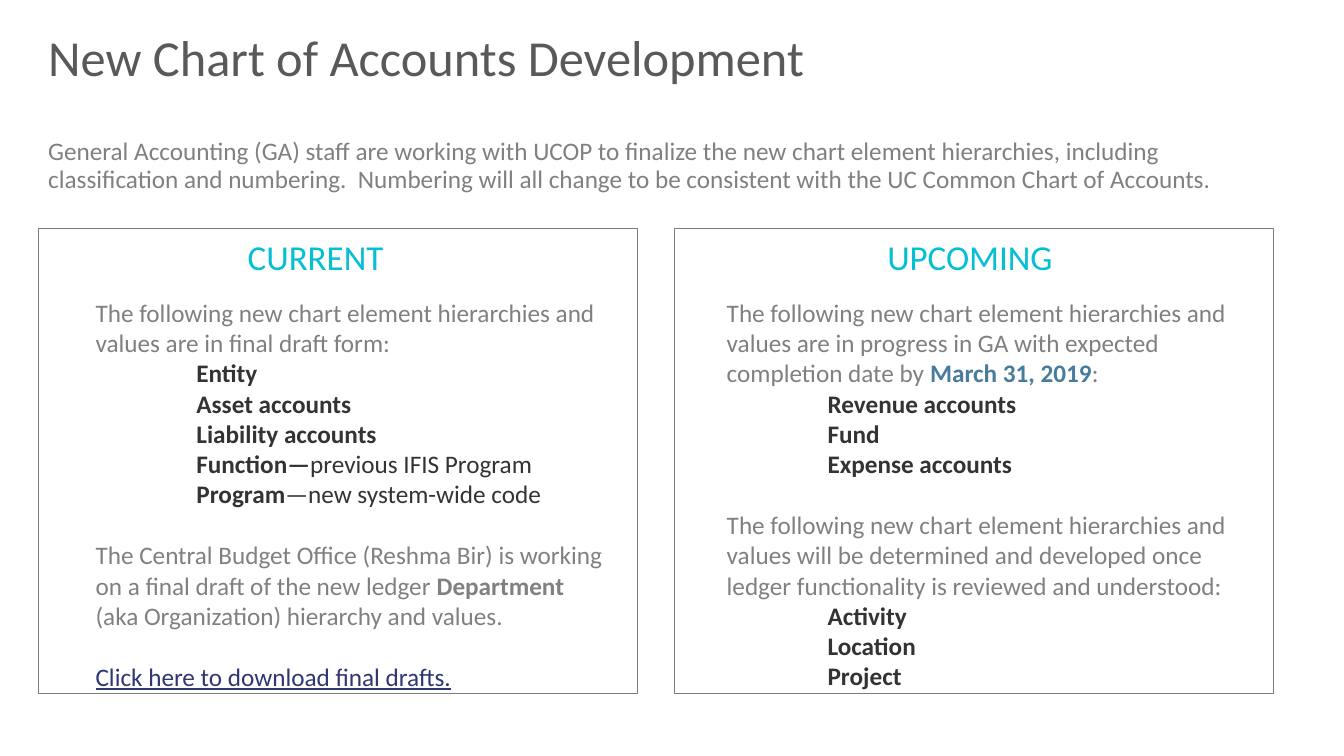
from pptx import Presentation
from pptx.dml.color import RGBColor
from pptx.enum.shapes import MSO_SHAPE
from pptx.enum.text import PP_ALIGN
from pptx.util import Inches, Pt

FONT = "Calibri"
TITLE_GRAY, GRAY, DARK = "585958", "808080", "333333"
CYAN, BLUE, LINK, BORDER = "05BFD5", "487C9C", "2E3772", "7C7C7C"

# A run is (text, colour, style letters): b = bold, u = underlined.
# A paragraph is (kind, runs).
TITLE = [("body", [("New Chart of Accounts Development", TITLE_GRAY, "")])]
INTRO = [("body", [(
    "General Accounting (GA) staff are working with UCOP to finalize the new chart "
    "element hierarchies, including classification and numbering.  Numbering will all "
    "change to be consistent with the UC Common Chart of Accounts.", GRAY, "")])]


def items(*names):
    return [("item", [(name, DARK, "b")]) for name in names]


CURRENT = [
    ("body", [("The following new chart element hierarchies and values are in "
               "final draft\u00a0form:", GRAY, "")]),
    *items("Entity", "Asset accounts", "Liability accounts"),
    ("item", [("Function—", DARK, "b"), ("previous IFIS Program", DARK, "")]),
    ("item", [("Program", DARK, "b"), ("—new system-wide code", DARK, "")]),
    ("section", [("The Central Budget Office (Reshma Bir) is working on a final draft "
                  "of the new ledger ", GRAY, ""),
                 ("Department", GRAY, "b"),
                 (" (aka Organization) hierarchy and values.", GRAY, "")]),
    ("section", [("Click here to download final drafts.", LINK, "u")]),
]
UPCOMING = [
    ("body", [("The following new chart element hierarchies and values are in progress "
               "in GA with expected completion date by ", GRAY, ""),
              ("March 31, 2019", BLUE, "b"), (":", GRAY, "")]),
    *items("Revenue accounts", "Fund", "Expense accounts"),
    ("section", [("The following new chart element hierarchies and values will be "
                  "determined and developed once ledger functionality is reviewed and "
                  "understood:", GRAY, "")]),
    *items("Activity", "Location", "Project"),
]
# heading, heading centre, text left, paragraphs
PANELS = [("CURRENT", 3.13, 0.85, CURRENT), ("UPCOMING", 9.62, 7.11, UPCOMING)]

PANEL_LEFT, PANEL_TOP, PANEL_WIDTH, PANEL_HEIGHT, PANEL_STEP = 0.38, 2.27, 5.94, 4.61, 6.31
HEADING_WIDTH = 1.86
ITEM_INDENT = Inches(1)
SECTION_GAP = Pt(22)


def rgb(code):
    return RGBColor.from_string(code)


def add_text(slide, area, paragraphs, size, spacing=None, align=PP_ALIGN.LEFT):
    box = slide.shapes.add_textbox(*map(Inches, area))
    frame = box.text_frame
    frame.word_wrap = True
    for number, (kind, runs) in enumerate(paragraphs):
        para = frame.add_paragraph() if number else frame.paragraphs[0]
        para.alignment = align
        if spacing:
            para.line_spacing = spacing
        if kind == "item":
            para._p.get_or_add_pPr().set("marL", str(ITEM_INDENT))
        elif kind == "section":
            para.space_before = SECTION_GAP
        for text, color, style in runs:
            span = para.add_run()
            span.text = text
            span.font.name = FONT
            span.font.size = Pt(size)
            span.font.color.rgb = rgb(color)
            span.font.bold = "b" in style
            span.font.underline = "u" in style


def add_panel(slide, left):
    panel = slide.shapes.add_shape(MSO_SHAPE.RECTANGLE, *map(
        Inches, (left, PANEL_TOP, PANEL_WIDTH, PANEL_HEIGHT)))
    panel.shadow.inherit = False
    panel.fill.background()
    panel.line.color.rgb = rgb(BORDER)
    panel.line.width = Pt(0.75)


def main():
    deck = Presentation()
    deck.slide_width, deck.slide_height = Inches(13.33), Inches(7.5)
    slide = deck.slides.add_slide(deck.slide_layouts[6])
    add_text(slide, (0.38, 0.28, 12.35, 0.7), TITLE, 36, 0.9)
    add_text(slide, (0.38, 1.33, 12.35, 0.65), INTRO, 18, 0.9)
    for column, (heading, centre, text_left, paragraphs) in enumerate(PANELS):
        add_panel(slide, PANEL_LEFT + column * PANEL_STEP)
        add_text(slide, (centre - HEADING_WIDTH / 2, 2.29, HEADING_WIDTH, 0.52),
                 [("body", [(heading, CYAN, "")])], 25, align=PP_ALIGN.CENTER)
        add_text(slide, (text_left, 2.9, 5.26, 4.04), paragraphs, 18)
    deck.save("out.pptx")


if __name__ == "__main__":
    main()
